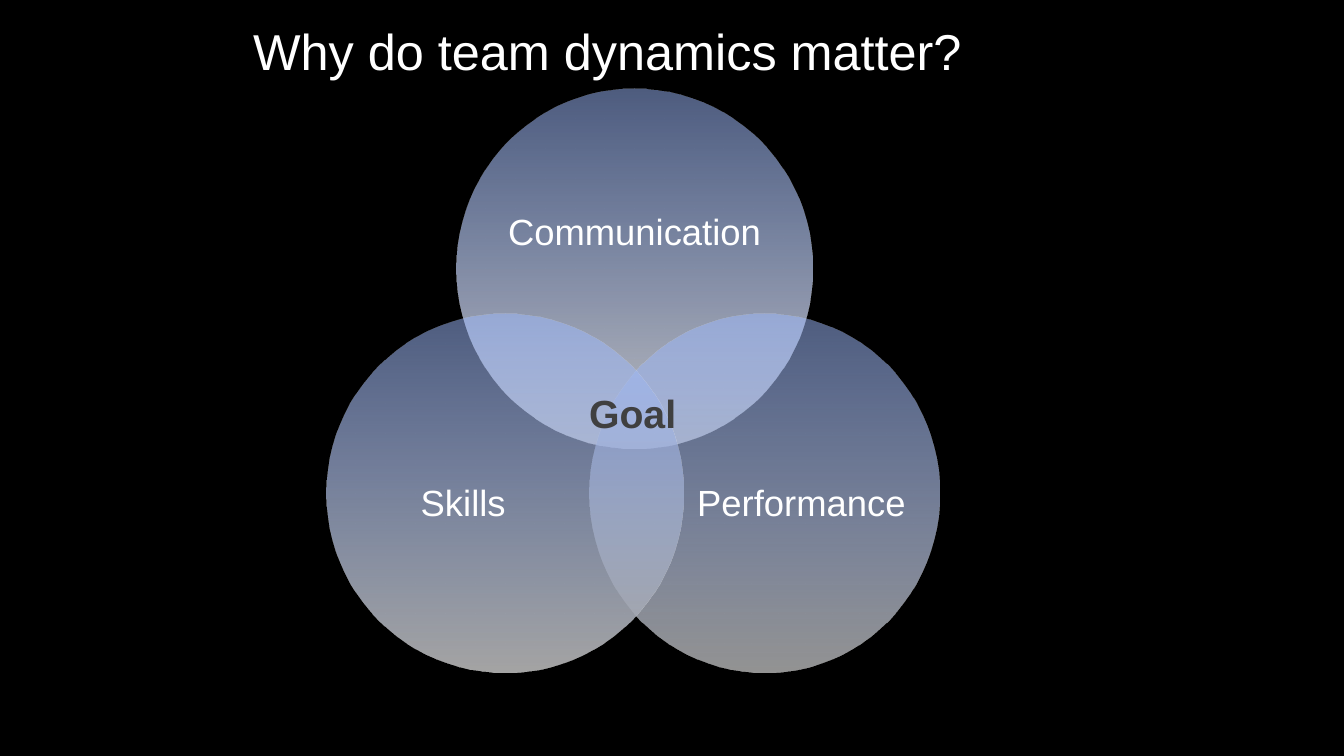
"""Builds a slide with a three-circle Venn diagram on team dynamics."""
from lxml import etree
from pptx import Presentation
from pptx.dml.color import RGBColor
from pptx.enum.shapes import MSO_SHAPE
from pptx.enum.text import MSO_ANCHOR, MSO_AUTO_SIZE, PP_ALIGN
from pptx.oxml.ns import qn
from pptx.util import Inches, Pt

OVAL = MSO_SHAPE.OVAL
TOP, MIDDLE = MSO_ANCHOR.TOP, MSO_ANCHOR.MIDDLE
CENTER = PP_ALIGN.CENTER
NO_AUTOFIT = MSO_AUTO_SIZE.NONE
TITLE_ONLY = 5

CIRCLES = [
    ("Communication", (4.53, 0.88, 3.53, 3.57), "BFBFBF", (5, 1.51, 2.59, 1.61)),
    ("Performance ", (5.85, 3.11, 3.47, 3.56), "959595", (6.91, 4.03, 2.08, 1.96)),
    ("Skills ", (3.24, 3.11, 3.54, 3.56), "A6A6A6", (3.58, 4.03, 2.13, 1.96)),
]


def color(hex_string):
    return RGBColor.from_string(hex_string)


class VennSlide:
    font = "Arial"
    white = "FFFFFF"
    dark = "404040"
    glow = "9FBBFF"
    background = "000000"

    def __init__(self, presentation):
        self.slide = presentation.slides.add_slide(presentation.slide_layouts[TITLE_ONLY])
        fill = self.slide.background.fill
        fill.solid()
        fill.fore_color.rgb = color(self.background)
        self.diagram = self.slide.shapes.add_group_shape()

    def set_text(self, shape, text, size, hex_string, anchor=TOP, inset=None, bold=False, spacing=1.0):
        frame = shape.text_frame
        frame.text = text
        frame.word_wrap = True
        frame.auto_size = NO_AUTOFIT
        frame.vertical_anchor = anchor
        if inset is not None:
            frame.margin_left = frame.margin_right = Inches(inset)
            frame.margin_top = frame.margin_bottom = Inches(inset)
        paragraph = frame.paragraphs[0]
        paragraph.alignment = CENTER
        paragraph.line_spacing = spacing
        font = paragraph.runs[0].font
        font.name, font.size, font.bold = self.font, Pt(size), bold
        font.color.rgb = color(hex_string)

    def title(self, text, box):
        shape = self.slide.shapes.title
        shape.left, shape.top, shape.width, shape.height = map(Inches, box)
        self.set_text(shape, text, 36, self.white)

    def circle(self, box, base):
        shape = self.diagram.shapes.add_shape(OVAL, *map(Inches, box))
        shape.shadow.inherit = False
        shape.line.fill.background()
        shape.fill.gradient()
        shape.fill.gradient_angle = 90
        stops = shape.fill.gradient_stops
        for stop, position, hex_string in zip(stops, (0, 1), (base, self.glow)):
            stop.position = position
            stop.color.rgb = color(hex_string)
        glow_color = shape.element.spPr.findall(".//" + qn("a:srgbClr"))[-1]
        etree.SubElement(glow_color, qn("a:alpha"), val="50000")

    def label(self, text, box):
        shape = self.diagram.shapes.add_textbox(*map(Inches, box))
        self.set_text(shape, text, 26, self.white, MIDDLE, inset=0, spacing=0.9)

    def goal(self, text, box):
        shape = self.slide.shapes.add_textbox(*map(Inches, box))
        self.set_text(shape, text, 28, self.dark, inset=0.06, bold=True)


def main():
    presentation = Presentation()
    presentation.slide_width, presentation.slide_height = Inches(13.33), Inches(7.5)
    venn = VennSlide(presentation)
    for text, circle_box, base, label_box in CIRCLES:
        venn.circle(circle_box, base)
        venn.label(text, label_box)
    venn.goal("Goal", (5.74, 3.8, 1.07, 0.58))
    venn.title("Why do team dynamics matter? ", (2.04, 0.15, 8.11, 0.71))
    presentation.save("out.pptx")


if __name__ == "__main__":
    main()
